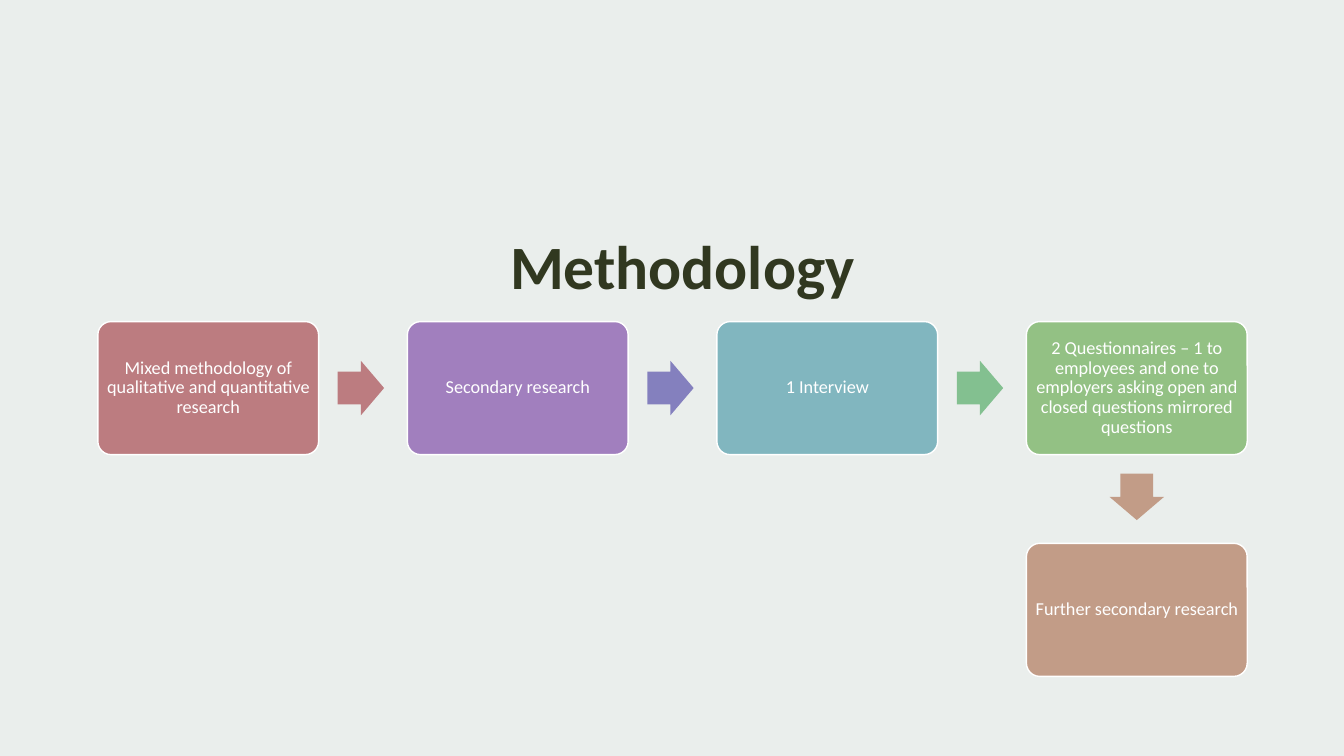
from lxml.etree import SubElement
from pptx import Presentation
from pptx.dml.color import RGBColor
from pptx.enum.shapes import MSO_SHAPE as Shape
from pptx.enum.text import MSO_ANCHOR as Anchor, MSO_AUTO_SIZE as AutoSize, PP_ALIGN as Align
from pptx.oxml.ns import qn
from pptx.util import Inches, Pt

WIDTH, HEIGHT = 13.33, 7.5
LEFT, TOP = 0.97, 3.19
COLUMN, ROW = 3.07, 2.2
BOX_WIDTH, BOX_HEIGHT = 2.19, 1.32
ARROW_LENGTH, ARROW_BREADTH = 0.46, 0.54
ARROW_OFFSET = 0.42


def colour(value):
    return RGBColor.from_string(value)


class Flow:
    font_name = "Calibri"
    white = "FFFFFF"
    dark = "313820"

    def __init__(self, page):
        self.page = page

    def shape(self, kind, left, top, width, height, fill):
        item = self.page.shapes.add_shape(
            kind, Inches(left), Inches(top), Inches(width), Inches(height))
        item.shadow.inherit = False
        item.fill.solid()
        item.fill.fore_color.rgb = colour(fill)
        item.line.fill.background()
        return item

    def backdrop(self, fill, opacity):
        item = self.shape(Shape.RECTANGLE, 0, 0, WIDTH, HEIGHT, fill)
        tone = item.element.spPr.find(qn("a:solidFill"))[0]
        SubElement(tone, qn("a:alpha"), val=str(opacity * 1000))

    def set_text(self, frame, text, size, tone, bold=False):
        frame.word_wrap = True
        frame.auto_size = AutoSize.NONE
        para = frame.paragraphs[0]
        para.text = text
        para.alignment = Align.CENTER
        para.line_spacing = 0.9
        para.font.name = self.font_name
        para.font.size = Pt(size)
        para.font.bold = bold
        para.font.color.rgb = colour(tone)

    def title(self, text):
        title = self.page.shapes.title
        title.element.getparent().append(title.element)
        title.left, title.top = Inches(1.31), Inches(0.42)
        title.width, title.height = Inches(10.92), Inches(2.63)
        title.text_frame.vertical_anchor = Anchor.BOTTOM
        self.set_text(title.text_frame, text, 44, self.dark, bold=True)

    def step(self, column, row, text, fill):
        box = self.shape(Shape.ROUNDED_RECTANGLE, LEFT + column * COLUMN,
                         TOP + row * ROW, BOX_WIDTH, BOX_HEIGHT, fill)
        box.adjustments[0] = 0.1
        box.line.color.rgb = colour(self.white)
        box.line.width = Pt(1)
        frame = box.text_frame
        frame.margin_left = frame.margin_right = Inches(0.05)
        frame.margin_top = frame.margin_bottom = Inches(0.05)
        frame.vertical_anchor = Anchor.MIDDLE
        self.set_text(frame, text, 13, self.white)

    def arrow(self, column, row, fill, down=False):
        across = BOX_WIDTH / 2 if down else BOX_WIDTH + ARROW_OFFSET
        along = BOX_HEIGHT + ARROW_OFFSET if down else BOX_HEIGHT / 2
        arrow = self.shape(
            Shape.RIGHT_ARROW,
            LEFT + column * COLUMN + across - ARROW_LENGTH / 2,
            TOP + row * ROW + along - ARROW_BREADTH / 2,
            ARROW_LENGTH, ARROW_BREADTH, fill)
        arrow.adjustments[0] = 0.6
        arrow.adjustments[1] = 0.5
        arrow.rotation = 90 if down else 0


STEPS = [
    (0, 0, "Mixed methodology of qualitative and quantitative research", "BC7C80", "BC7C80"),
    (1, 0, "Secondary research", "A17FBE", "8480BE"),
    (2, 0, "1 Interview", "81B6BF", "83C090"),
    (3, 0, "2 Questionnaires – 1 to employees and one to employers asking open "
           "and closed questions mirrored questions", "93C184", "C29C87"),
    (3, 1, "Further secondary research", "C29C87", None),
]


def main():
    deck = Presentation()
    deck.slide_width, deck.slide_height = Inches(WIDTH), Inches(HEIGHT)
    flow = Flow(deck.slides.add_slide(deck.slide_layouts[5]))
    flow.backdrop("FFFFFF", 100)
    flow.backdrop("E2E8E5", 70)
    flow.title("Methodology")
    for column, row, text, fill, arrow_fill in STEPS:
        flow.step(column, row, text, fill)
        if arrow_fill:
            flow.arrow(column, row, arrow_fill, down=column == 3)
    deck.save("out.pptx")


if __name__ == "__main__":
    main()
